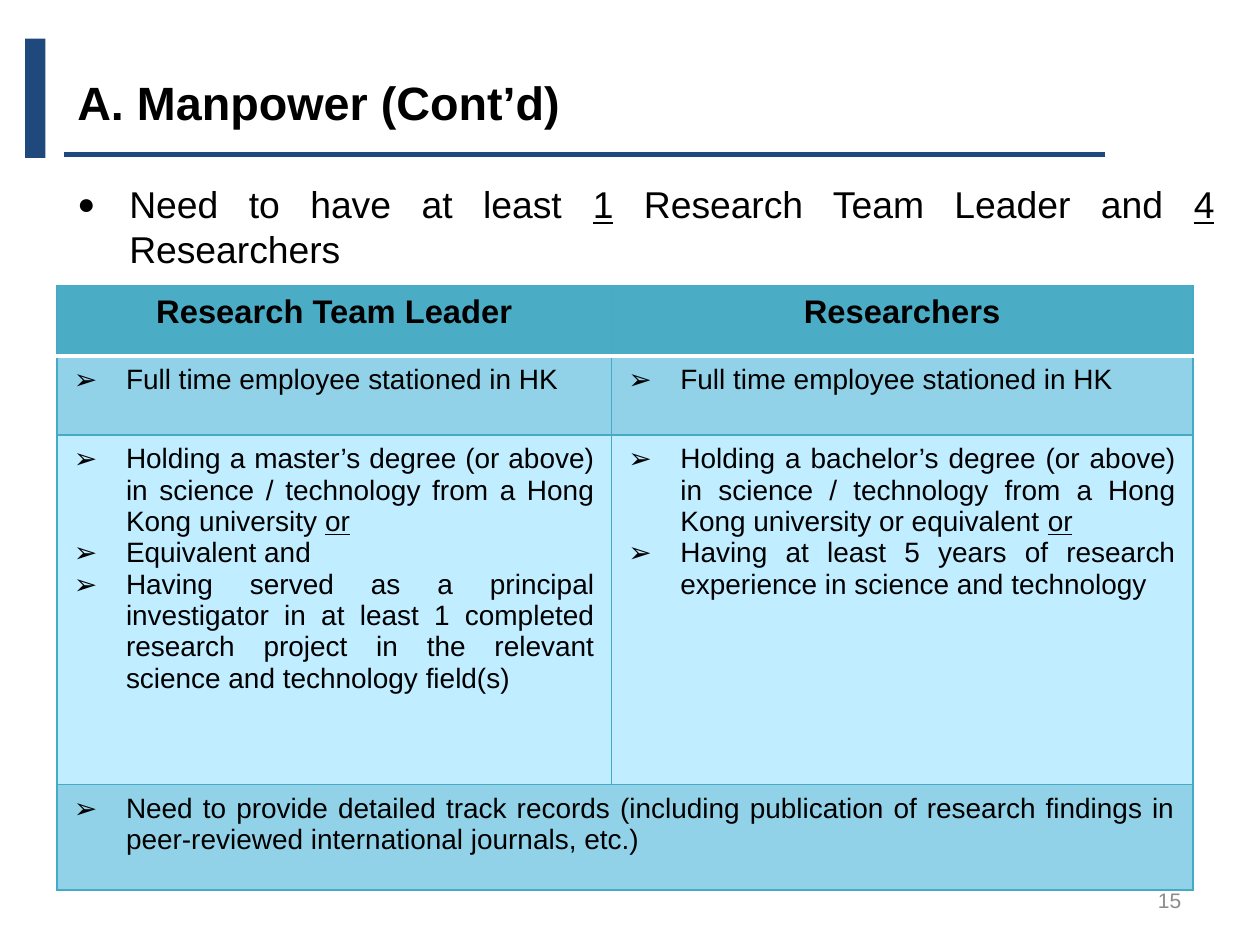
from dataclasses import dataclass

import pptx
import pptx.dml.color
import pptx.enum.shapes
import pptx.enum.text
import pptx.oxml.ns
import pptx.util
from lxml import etree
from pptx.util import Inches

ALIGN = pptx.enum.text.PP_ALIGN
ANCHOR = pptx.enum.text.MSO_ANCHOR


@dataclass(frozen=True)
class Theme:
    font: str = "Arial"
    ink: str = "000000"
    navy: str = "1F497D"
    grey: str = "8C8C8C"
    header: str = "4BACC6"
    band: str = "91D2E8"
    pale: str = "C0EDFF"
    border: str = "46AAC5"
    divider: str = "FFFFFF"
    title_size: float = 20
    body_size: float = 16
    header_size: float = 14
    cell_size: float = 12
    number_size: float = 9


THEME = Theme()
INDENT = Inches(0.31)

DEGREE_LEADER = [
    "Holding a master’s degree (or above) in science / technology from a Hong Kong university ",
    "_or",
]
DEGREE_RESEARCHER = [
    "Holding a bachelor’s degree (or above) in science / technology from a Hong Kong "
    "university or equivalent ",
    "_or",
]
INVESTIGATOR = [
    "Having served as a principal investigator in at least 1 completed research project "
    "in the relevant science and technology field(s)"
]
EXPERIENCE = ["Having at least 5 years of research experience in science and technology"]
TRACK_RECORDS = [
    "Need to provide detailed track records (including publication of research findings "
    "in peer-reviewed international journals, etc.)"
]
FULL_TIME = [["Full time employee stationed in HK"]]
# Each row: height, fill, alignment, and the paragraphs of each cell
ROWS = [
    (0.42, THEME.header, ALIGN.CENTER, [[["Research Team Leader"]], [["Researchers"]]]),
    (0.47, THEME.band, ALIGN.LEFT, [FULL_TIME, FULL_TIME]),
    (2.08, THEME.pale, ALIGN.JUSTIFY, [
        [DEGREE_LEADER, ["Equivalent and"], INVESTIGATOR],
        [DEGREE_RESEARCHER, EXPERIENCE],
    ]),
    (0.63, THEME.band, ALIGN.JUSTIFY, [[TRACK_RECORDS], []]),
]
COLUMNS = [3.3, 3.46]


def rgb(code):
    return pptx.dml.color.RGBColor.from_string(code)


def add_element(parent, tag, **attributes):
    element = etree.SubElement(parent, pptx.oxml.ns.qn(tag))
    for name, value in attributes.items():
        element.set(name, str(value))
    return element


def set_bullet(para, character, percent=100):
    properties = para._p.get_or_add_pPr()
    properties.set("marL", str(INDENT))
    properties.set("indent", str(-INDENT))
    add_element(add_element(properties, "a:buClr"), "a:srgbClr", val=THEME.ink)
    add_element(properties, "a:buSzPct", val=percent * 1000)
    add_element(properties, "a:buFont", typeface=THEME.font)
    add_element(properties, "a:buChar", char=character)


def write(para, parts, size, color=THEME.ink, bold=False, align=ALIGN.LEFT):
    """Add one run per part; a leading underscore marks an underlined part."""
    para.alignment = align
    for part in parts:
        span = para.add_run()
        span.text = part.removeprefix("_")
        span.font.name = THEME.font
        span.font.size = pptx.util.Pt(size)
        span.font.bold = bold
        span.font.underline = part.startswith("_")
        span.font.color.rgb = rgb(color)


def place(shape, left, top, width, height, anchor=ANCHOR.TOP):
    """Move a text shape to its box and return its first paragraph."""
    shape.left, shape.top = Inches(left), Inches(top)
    shape.width, shape.height = Inches(width), Inches(height)
    frame = shape.text_frame
    frame.word_wrap = True
    frame.auto_size = pptx.enum.text.MSO_AUTO_SIZE.NONE
    frame.vertical_anchor = anchor
    para = frame.paragraphs[0]
    para.space_before = pptx.util.Pt(0)
    return para


def add_heading(page, left, top):
    bar = page.shapes.add_shape(
        pptx.enum.shapes.MSO_SHAPE.RECTANGLE,
        Inches(left), Inches(top), Inches(0.12), Inches(0.71))
    bar.shadow.inherit = False
    bar.fill.solid()
    bar.fill.fore_color.rgb = rgb(THEME.navy)
    bar.line.fill.background()

    level = Inches(top + 0.69)
    rule = page.shapes.add_connector(
        pptx.enum.shapes.MSO_CONNECTOR.STRAIGHT,
        Inches(left + 0.23), level, Inches(left + 6.43), level)
    rule.line.color.rgb = rgb(THEME.navy)
    rule.line.width = pptx.util.Pt(2.25)
    add_element(rule._element.spPr, "a:effectLst")

    para = place(page.shapes.title, left + 0.21, top + 0.16, 6.97, 0.5)
    write(para, ["A. Manpower (Cont’d)"], THEME.title_size, bold=True)


def add_requirement(page, left, top, width, height):
    para = place(page.placeholders[1], left, top, width, height)
    set_bullet(para, "●", 80)
    write(para, ["Need to have at least ", "_1", " Research Team Leader and ", "_4",
                 " Researchers"], THEME.body_size, align=ALIGN.JUSTIFY)


def set_borders(cell, row):
    properties = cell._tc.get_or_add_tcPr()
    for side in "LRTB":
        divides = (row, side) in ((0, "B"), (1, "T"))
        line = add_element(properties, f"a:ln{side}",
                           w=pptx.util.Pt(2 if divides else 0.75))
        color = THEME.divider if divides else THEME.border
        add_element(add_element(line, "a:solidFill"), "a:srgbClr", val=color)


def fill_cell(cell, paragraphs, is_header, align):
    for index, parts in enumerate(paragraphs):
        frame = cell.text_frame
        para = frame.add_paragraph() if index else frame.paragraphs[0]
        if not is_header:
            set_bullet(para, "➢")
        size = THEME.header_size if is_header else THEME.cell_size
        write(para, parts, size, bold=is_header, align=align)


def add_criteria_table(page, left, top):
    height = sum(row[0] for row in ROWS)
    table = page.shapes.add_table(
        len(ROWS), len(COLUMNS), Inches(left), Inches(top),
        Inches(sum(COLUMNS)), Inches(height)).table
    for column, width in zip(table.columns, COLUMNS):
        column.width = Inches(width)
    for row, (height, fill, align, cells) in enumerate(ROWS):
        table.rows[row].height = Inches(height)
        for column, paragraphs in enumerate(cells):
            cell = table.cell(row, column)
            set_borders(cell, row)
            cell.fill.solid()
            cell.fill.fore_color.rgb = rgb(fill)
            fill_cell(cell, paragraphs, row == 0, align)
    last = len(ROWS) - 1
    table.cell(last, 0).merge(table.cell(last, 1))


def add_page_number(page, left, top, width, height):
    box = page.shapes.add_textbox(0, 0, 0, 0)
    para = place(box, left, top, width, height, ANCHOR.MIDDLE)
    write(para, ["15"], THEME.number_size, THEME.grey, align=ALIGN.RIGHT)


def main():
    deck = pptx.Presentation()
    deck.slide_width = Inches(7.5)
    deck.slide_height = deck.slide_width * 3 // 4
    page = deck.slides.add_slide(deck.slide_layouts[1])
    add_heading(page, 0.15, 0.23)
    add_requirement(page, 0.36, 1.03, 6.97, 0.65)
    add_criteria_table(page, 0.34, 1.7)
    add_page_number(page, 5.38, 5.21, 1.75, 0.3)
    deck.save("out.pptx")


if __name__ == "__main__":
    main()
